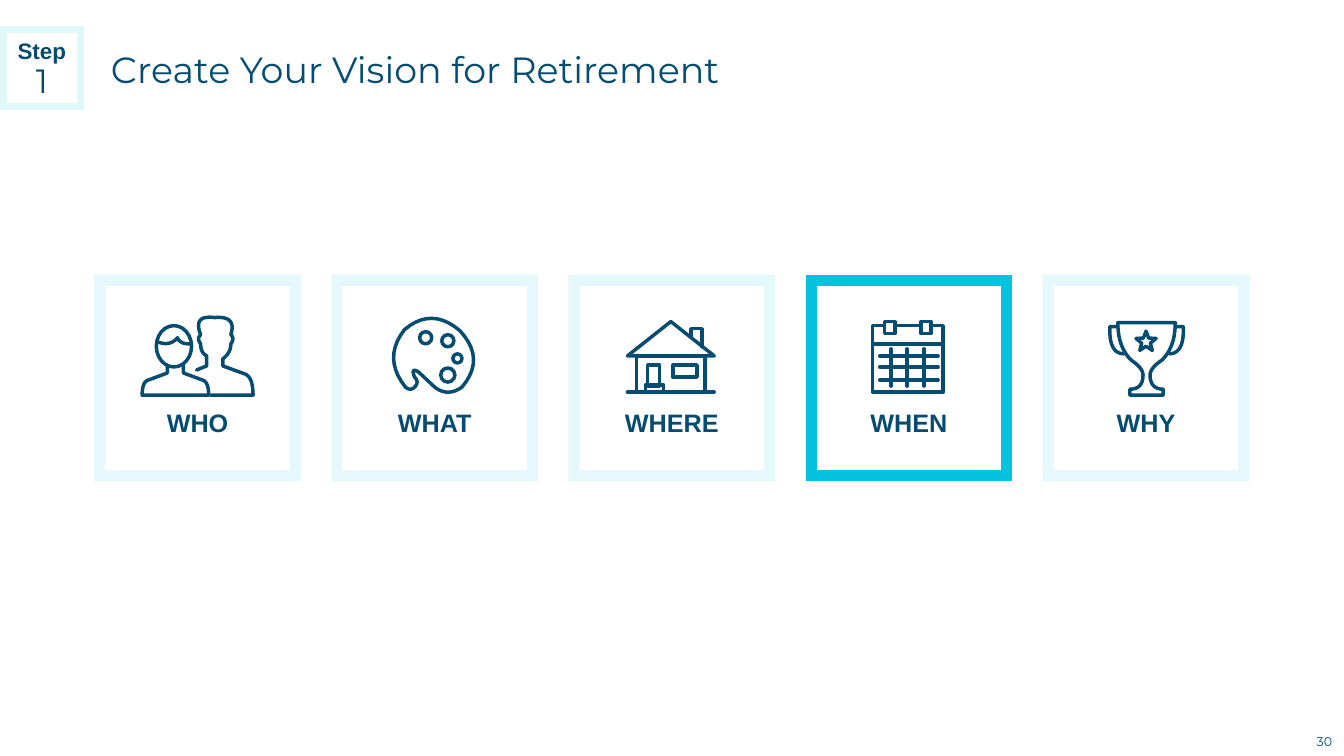
import math
from collections import namedtuple

from lxml import etree
from pptx import Presentation
from pptx import util as u
from pptx.dml import color
from pptx.enum import shapes, text
from pptx.oxml import ns

Box = namedtuple("Box", "left top width height")  # points

COLORS = {"navy": "054C70", "step": "054B70", "cyan": "05C3DE",
          "pale": "E1F8FB", "white": "FFFFFF"}
HEADING, LABEL = "Montserrat", "Arial"
GRID = 194  # icon coordinates count 194 units across a card
CURVE_STEPS = 10


# Icon outlines: a node of two numbers is a corner, of four a curve (control, end)
def outline(nodes, closed=False):
    corners = [nodes[0]]
    for node in nodes[1:]:
        if len(node) == 2:
            corners.append(node)
            continue
        start, control, end = corners[-1], node[:2], node[2:]
        for step in range(1, CURVE_STEPS + 1):
            t = step / CURVE_STEPS
            corners.append(tuple((1 - t)**2 * a + 2 * t * (1 - t) * b + t * t * c
                                 for a, b, c in zip(start, control, end)))
    return "path", closed, corners


def mirror(part, axis):
    kind, closed, corners = part
    return kind, closed, [(2 * axis - x, y) for x, y in corners]


def symmetric(nodes, axis, closed=False):
    half = outline(nodes, closed)
    return "path", closed, half[2] + mirror(half, axis)[2][::-1]


def star(x, y, outer, inner):
    corners = []
    for index in range(10):
        radius, angle = (inner if index % 2 else outer), math.pi * index / 5
        corners.append((x + radius * math.sin(angle), y - radius * math.cos(angle)))
    return outline(corners, True)


HANDLE = outline([(75, 73), (60, 73, 61, 46), (69, 46)])
ICONS = {
    "WHO": [
        symmetric([(67, 84), (67, 92), (48, 99), (42, 101, 42, 114)], 75),
        ("oval", 56, 45, 35, 41),
        outline([(91, 63), (80, 64, 77, 57), (70, 66, 57, 61)]),
        outline([(96, 89), (106, 85), (106, 75), (100, 72, 100, 63), (96, 58, 100, 54),
                 (92, 34, 114, 37), (136, 35, 130, 54), (134, 58, 130, 63),
                 (130, 72, 122, 78), (122, 85), (144, 93), (152, 96, 152, 114),
                 (110, 114)]),
    ],
    "WHAT": [
        outline([(68, 106), (45, 77, 67, 49), (94, 26, 122, 50), (148, 78, 124, 106),
                 (110, 116, 97, 106), (81, 91), (73, 86, 77, 96), (82, 101, 77, 106),
                 (73, 110, 68, 106)], True),
        *[("oval", x, y, size, size) for x, y, size in
          [(104, 54, 12), (115, 73, 9), (103, 87, 14), (82, 51, 12)]],
    ],
    "WHERE": [
        ("line", 53, 111, 139, 111),
        ("rect", 62, 75, 68, 36),
        outline([(96, 41), (53, 75), (139, 75)], True),
        outline([(127, 66), (127, 48), (116, 48), (116, 56)]),
        ("rect", 73, 84, 12, 21), ("rect", 98, 84, 24, 12), ("rect", 71, 104, 18, 7),
    ],
    "WHEN": [
        symmetric([(73, 45), (61, 45), (61, 111)], 96),
        *[("rect", x, 41, 10, 12) for x in (73, 109)],
        ("line", 83, 45, 109, 45), ("line", 61, 63, 131, 63),
        *[("line", x, 68, x, 105) for x in (79, 95, 112)],
        *[("line", 68, y, 126, y) for y in (75, 86, 99)],
    ],
    "WHY": [
        star(97, 61, 10.5, 4.5),
        HANDLE, mirror(HANDLE, 97.5),
        symmetric([(69, 42), (69, 66, 82, 79), (94, 87, 94, 94), (94, 108, 81, 108),
                   (81, 114)], 97.5, True),
    ],
}


def points(box):
    return [u.Pt(value) for value in box]


def rgb(name):
    return color.RGBColor.from_string(COLORS[name])


def style_line(shape, name, width, join="miter", alpha=None):
    shape.line.color.rgb = rgb(name)
    shape.line.width = u.Pt(width)
    line = shape.line._ln
    if alpha:
        tint = line.find(".//" + ns.qn("a:srgbClr"))
        etree.SubElement(tint, ns.qn("a:alpha"), val=str(alpha * 1000))
    etree.SubElement(line, ns.qn("a:" + join))
    if join == "round":
        line.set("cap", "rnd")


def write(shape, lines, margins, anchor, align, spacing=None):
    """Fill a shape with lines of (text, font name, size, bold, colour)."""
    frame = shape.text_frame
    settings = dict(zip(("margin_left", "margin_top", "margin_right", "margin_bottom"),
                        points(margins)))
    settings.update(word_wrap=True, auto_size=text.MSO_AUTO_SIZE.NONE,
                    vertical_anchor=anchor)
    for key, value in settings.items():
        setattr(frame, key, value)
    for index, (words, name, size, bold, ink) in enumerate(lines):
        para = frame.add_paragraph() if index else frame.paragraphs[0]
        para.alignment, para.line_spacing = align, spacing
        span = para.add_run()
        span.text = words
        for key, value in dict(name=name, size=u.Pt(size), bold=bold).items():
            setattr(span.font, key, value)
        span.font.color.rgb = rgb(ink)


def add_frame(parent, box, kind=shapes.MSO_SHAPE.RECTANGLE):
    shape = parent.add_shape(kind, *points(box))
    shape.shadow.inherit = False
    shape.fill.background()
    return shape


def add_icon(parent, parts, box):
    scale = box.width / GRID

    def place(x, y):
        return u.Pt(box.left + x * scale), u.Pt(box.top + y * scale)

    for kind, *values in parts:
        if kind == "path":
            closed, nodes = values
            corners = [place(*node) for node in nodes]
            builder = parent.build_freeform(*corners[0], scale=1.0)
            builder.add_line_segments(corners[1:], close=closed)
            shape = builder.convert_to_shape()
            shape.shadow.inherit = False
            shape.fill.background()
        elif kind == "line":
            shape = parent.add_connector(shapes.MSO_CONNECTOR.STRAIGHT,
                                         *place(*values[:2]), *place(*values[2:]))
            etree.SubElement(shape._element.spPr, ns.qn("a:effectLst"))
        else:
            x, y, width, height = [value * scale for value in values]
            preset = shapes.MSO_SHAPE.OVAL if kind == "oval" else shapes.MSO_SHAPE.RECTANGLE
            shape = add_frame(parent, Box(box.left + x, box.top + y, width, height), preset)
        style_line(shape, "navy", 2.5, "round")


def add_card(page, label, box, active):
    parent = page.shapes.add_group_shape().shapes
    style_line(add_frame(parent, box), "cyan", 8, alpha=None if active else 10)
    caption = parent.add_textbox(*points(Box(box.left, box.top + 87.1, box.width, 28.8)))
    write(caption, [(label, LABEL, 18, True, "navy")], (7.2, 3.6, 7.2, 3.6),
          text.MSO_ANCHOR.TOP, text.PP_ALIGN.CENTER)
    add_icon(parent, ICONS[label], box)


def add_cards(page, box):
    pitch = (box.width - box.height) / (len(ICONS) - 1)
    for index, label in enumerate(ICONS):
        card = Box(box.left + index * pitch, box.top, box.height, box.height)
        add_card(page, label, card, label == "WHEN")


def add_header(page, box):
    title = page.shapes.title
    title.left, title.top, title.width, title.height = points(
        Box(box.left + 72, box.top, box.width - 72, box.height))
    write(title, [("Create Your Vision for Retirement", HEADING, 26, False, "navy")],
          (7.2, 0, 0, 0), text.MSO_ANCHOR.MIDDLE, text.PP_ALIGN.LEFT)
    # Step marker
    marker = add_frame(page.shapes, Box(box.left + 2.2, box.top + 0.7, 55.4, 55.4))
    marker.fill.solid()
    marker.fill.fore_color.rgb = rgb("white")
    style_line(marker, "pale", 5)
    write(marker, [("Step", LABEL, 16, True, "step"), ("1", HEADING, 24, False, "step")],
          (0, 3.6, 0, 0), text.MSO_ANCHOR.MIDDLE, text.PP_ALIGN.CENTER, 0.9)


def add_page_number(page, box):
    number = page.shapes.add_textbox(*points(box))
    write(number, [("30", HEADING, 9, False, "navy")], (0, 0, 0, 0),
          text.MSO_ANCHOR.MIDDLE, text.PP_ALIGN.CENTER)


def main():
    deck = Presentation()
    deck.slide_width, deck.slide_height = u.Pt(960), u.Pt(540)
    page = deck.slides.add_slide(deck.slide_layouts[5])
    add_header(page, Box(0, 20.2, 900, 58.3))
    add_cards(page, Box(71.3, 200.2, 817.2, 139.7))
    add_page_number(page, Box(933.8, 520.6, 24.5, 18))
    deck.save("out.pptx")


if __name__ == "__main__":
    main()
